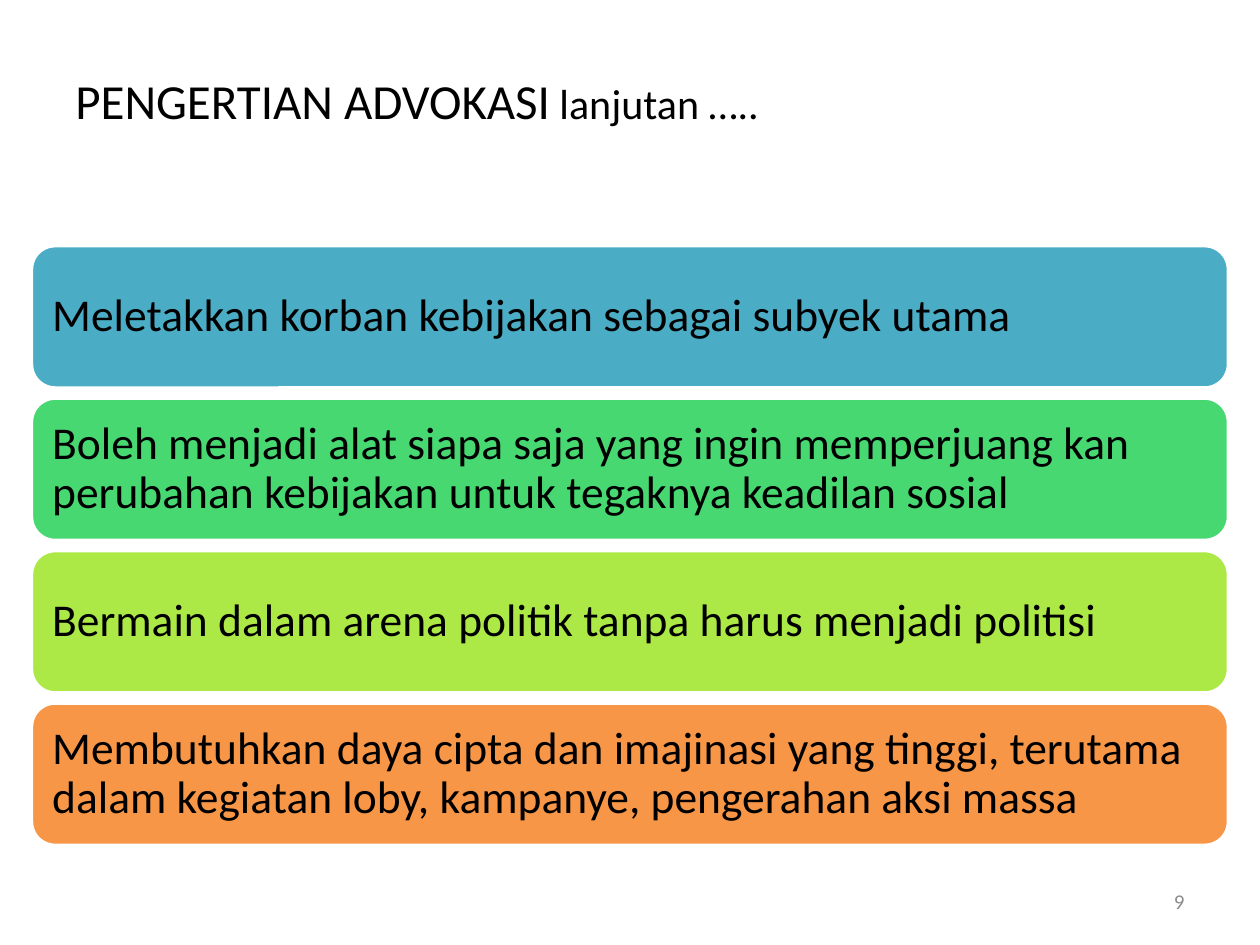
from dataclasses import dataclass

import pptx
import pptx.dml.color
import pptx.enum.shapes
import pptx.enum.text
import pptx.presentation
import pptx.slide
import pptx.util
from pptx.util import Inches

ALIGN = pptx.enum.text.PP_ALIGN


@dataclass(frozen=True)
class Theme:
    font: str = "Calibri"
    text: str = "000000"
    muted: str = "8C8C8C"
    outline: str = "FFFFFF"
    outline_width: float = 2
    title_size: int = 28
    subtitle_size: int = 24
    bar_size: int = 26
    number_size: int = 12


@dataclass(frozen=True)
class Box:
    left: float
    top: float
    width: float
    height: float

    def lengths(self) -> tuple:
        return tuple(Inches(v) for v in (self.left, self.top, self.width, self.height))


@dataclass(frozen=True)
class Run:
    text: str
    size: int
    color: str


@dataclass(frozen=True)
class Bar:
    text: str
    fill: str


THEME = Theme()
TITLE_BOX = Box(0.5, 0.42, 9, 0.74)
NUMBER_BOX = Box(7.17, 6.95, 2.33, 0.4)
FIRST_BAR = Box(0.25, 1.95, 9.5, 1.13)
BAR_GAP = 0.08
BAR_INSET = 0.11

BARS = [
    Bar("Meletakkan korban kebijakan sebagai subyek utama", "4BACC6"),
    Bar("Boleh menjadi alat siapa saja yang ingin memperjuang kan "
        "perubahan kebijakan untuk tegaknya keadilan sosial", "47D872"),
    Bar("Bermain dalam arena politik tanpa harus menjadi politisi", "ACE946"),
    Bar("Membutuhkan daya cipta dan imajinasi yang tinggi, terutama "
        "dalam kegiatan loby, kampanye, pengerahan aksi massa", "F79646"),
]


def rgb(value: str) -> pptx.dml.color.RGBColor:
    return pptx.dml.color.RGBColor.from_string(value)


def write_line(tf, runs: list[Run], align=ALIGN.LEFT):
    """Fill the frame with one vertically centred paragraph and return it."""
    tf.word_wrap = True
    tf.vertical_anchor = pptx.enum.text.MSO_ANCHOR.MIDDLE
    p = tf.paragraphs[0]
    p.alignment = align
    for run in runs:
        r = p.add_run()
        r.text = run.text
        r.font.name = THEME.font
        r.font.size = pptx.util.Pt(run.size)
        r.font.color.rgb = rgb(run.color)
    return p


def add_text(s: pptx.slide.Slide, box: Box, runs: list[Run], align=ALIGN.LEFT) -> None:
    write_line(s.shapes.add_textbox(*box.lengths()).text_frame, runs, align)


def add_bar(s: pptx.slide.Slide, box: Box, bar: Bar) -> None:
    sp = s.shapes.add_shape(
        pptx.enum.shapes.MSO_SHAPE.ROUNDED_RECTANGLE, *box.lengths())
    sp.shadow.inherit = False
    sp.fill.solid()
    sp.fill.fore_color.rgb = rgb(bar.fill)
    sp.line.color.rgb = rgb(THEME.outline)
    sp.line.width = pptx.util.Pt(THEME.outline_width)
    tf = sp.text_frame
    tf.margin_left = tf.margin_right = Inches(BAR_INSET)
    tf.margin_top = tf.margin_bottom = Inches(BAR_INSET)
    p = write_line(tf, [Run(bar.text, THEME.bar_size, THEME.text)])
    p.line_spacing = 0.9


def build() -> pptx.presentation.Presentation:
    prs = pptx.Presentation()
    prs.slide_width, prs.slide_height = Inches(10), Inches(7.5)
    s = prs.slides.add_slide(prs.slide_layouts[6])

    add_text(s, TITLE_BOX, [
        Run("PENGERTIAN ADVOKASI", THEME.title_size, THEME.text),
        Run(" lanjutan …..", THEME.subtitle_size, THEME.text),
    ])
    pitch = FIRST_BAR.height + BAR_GAP
    for i, bar in enumerate(BARS):
        box = Box(FIRST_BAR.left, FIRST_BAR.top + i * pitch,
                  FIRST_BAR.width, FIRST_BAR.height)
        add_bar(s, box, bar)
    add_text(s, NUMBER_BOX, [Run("9", THEME.number_size, THEME.muted)], ALIGN.RIGHT)
    return prs


if __name__ == "__main__":
    build().save("out.pptx")
